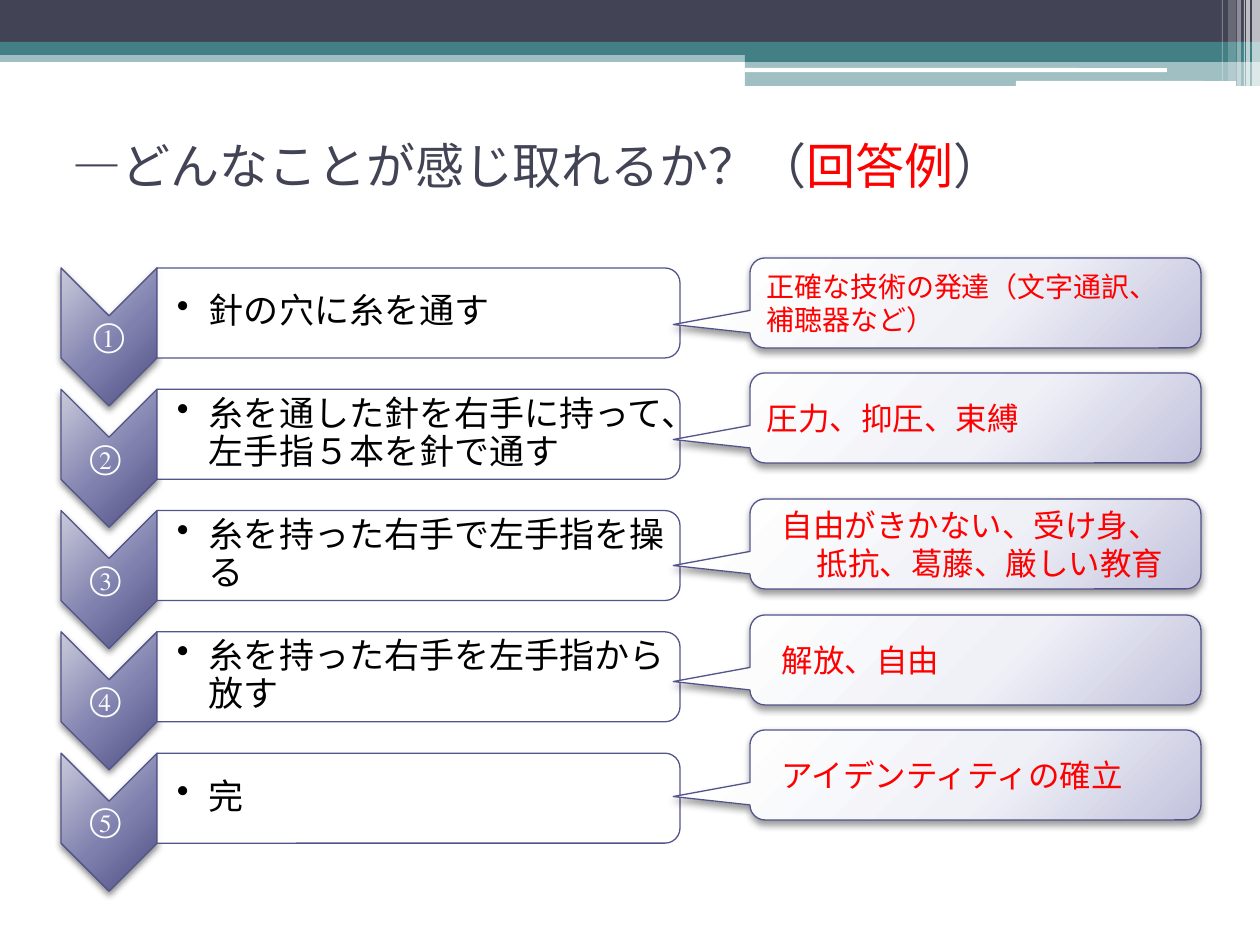
from lxml import etree
from pptx import Presentation
from pptx import util as u
from pptx.dml.color import RGBColor
from pptx.enum import shapes, text
from pptx.oxml import parse_xml
from pptx.oxml.ns import nsdecls, qn

PX = 914400 / 126
NAVY = RGBColor(0x42, 0x44, 0x56)
TEAL = RGBColor(0x43, 0x80, 0x86)
PURPLE = RGBColor(0x53, 0x54, 0x8A)
WHITE = RGBColor(0xFF, 0xFF, 0xFF)
BLACK = RGBColor(0, 0, 0)
RED = RGBColor(0xFF, 0, 0)
CHEVRON_SHADES = [(0, RGBColor(0xC9, 0xC9, 0xDA)), (55, RGBColor(0x7F, 0x80, 0xAE)),
                  (100, RGBColor(0x4D, 0x4E, 0x81))]
CALLOUT_SHADES = [(0, RGBColor(0xFE, 0xFE, 0xFE)), (55, RGBColor(0xF0, 0xF1, 0xF7)),
                  (100, RGBColor(0xC2, 0xC2, 0xDD))]
KIND = shapes.MSO_SHAPE
CJK = "Noto Sans CJK JP"

STEPS = [("①", "針の穴に糸を通す"),
         ("② ", "糸を通した針を右手に持って、左手指５本を針で通す"),
         ("③ ", "糸を持った右手で左手指を操る"),
         ("④ ", "糸を持った右手を左手指から放す"),
         ("⑤ ", "完")]
ANSWERS = [(258, "正確な技術の発達（文字通訳、補聴器など）", dict(size=16)),
           (373, "圧力、抑圧、束縛", {}),
           (499, "自由がきかない、受け身、抵抗、葛藤、厳しい教育", dict(indent=(50, -35))),
           (615, "解放、自由", dict(indent=(50, -35), before=3)),
           (730, "アイデンティティの確立", dict(indent=(50, -35), before=3))]


def px(*lengths):
    """Turn px lengths into EMU."""
    return [u.Emu(round(length * PX)) for length in lengths]


def write(frame, runs, font, size, east=CJK, align=text.PP_ALIGN.LEFT, insets=None,
          spacing=None, before=None, indent=None, bullet=False):
    """Fill a text frame with one paragraph of (wording, colour) runs."""
    frame.word_wrap = True
    frame.vertical_anchor = text.MSO_ANCHOR.MIDDLE
    if insets:
        (frame.margin_left, frame.margin_top,
         frame.margin_right, frame.margin_bottom) = px(*insets)
    paragraph = frame.paragraphs[0]
    paragraph.alignment = align
    if spacing:
        paragraph.line_spacing = spacing
    if before:
        paragraph.space_before = u.Pt(before)
    properties = paragraph._p.get_or_add_pPr()
    if indent:
        margin, first = px(*indent)
        properties.set("marL", str(margin))
        properties.set("indent", str(first))
    if bullet:
        etree.SubElement(properties, qn("a:buChar"), char="•")
    for wording, colour in runs:
        run = paragraph.add_run()
        run.text = wording
        run.font.size = u.Pt(size)
        run.font.color.rgb = colour
        run.font.name = font
        etree.SubElement(run._r.get_or_add_rPr(), qn("a:ea"), typeface=east)


def draw(parent, kind, box, fill=None, alpha=100, line=None, turned=False):
    """Add a preset shape covering the box, turned a quarter if asked."""
    x, y, w, h = box
    if turned:
        x, y, w, h = x + (w - h) / 2, y + (h - w) / 2, h, w
    shape = parent.add_shape(kind, *px(x, y, w, h))
    shape.shadow.inherit = False
    if turned:
        shape.rotation = 90
    if fill is None:
        shape.fill.background()
    else:
        shape.fill.solid()
        shape.fill.fore_color.rgb = fill
        if alpha < 100:
            colour = shape._element.spPr.find(qn("a:solidFill"))[0]
            etree.SubElement(colour, qn("a:alpha"), val=str(alpha * 1000))
    if line is None:
        shape.line.fill.background()
    else:
        shape.line.color.rgb = line
        shape.line.width = u.Pt(0.75)
    return shape


def glow(shape, shades, shadow_alpha):
    """Give a shape a radial gradient and a soft shadow below."""
    stops = "".join(f'<a:gs pos="{pos * 1000}"><a:srgbClr val="{shade}"/></a:gs>'
                    for pos, shade in shades)
    gradient = parse_xml(
        f'<a:gradFill {nsdecls("a")} rotWithShape="1"><a:gsLst>{stops}</a:gsLst>'
        '<a:path path="circle"><a:fillToRect l="-40000" t="-90000" r="140000" b="190000"/>'
        '</a:path></a:gradFill>')
    properties = shape._element.spPr
    properties.replace(properties.find(qn("a:noFill")), gradient)
    properties.find(qn("a:effectLst")).append(parse_xml(
        f'<a:outerShdw {nsdecls("a")} blurRad="{u.Pt(4)}" dist="{u.Pt(2)}" dir="5400000" '
        f'rotWithShape="0"><a:srgbClr val="{BLACK}"><a:alpha val="{shadow_alpha * 1000}"/>'
        '</a:srgbClr></a:outerShdw>'))


def add_header(slide, width):
    """Draw the banded header with its stripes at the right."""
    bands = [(0, 50, width, 12, TEAL, 50), (0, 0, width, 42, NAVY, 100),
             (0, 42, width, 13, TEAL, 100), (745, 49, width - 745, 13, TEAL, 100),
             (745, 61, width - 745, 25, TEAL, 50)]
    stripes = [(1252, 0, 8, 86, WHITE, 65), (1246, 0, 4, 86, WHITE, 65),
               (1244, 0, 1, 86, WHITE, 60), (1237, 0, 4, 86, WHITE, 40),
               (1228, 0, 8, 81, WHITE, 20), (1222, 0, 1, 81, WHITE, 30)]
    for *box, colour, alpha in bands:
        draw(slide.shapes, KIND.RECTANGLE, box, colour, alpha)
    for box in ((745, 68, 422, 4), (1016, 81, 220, 5)):
        draw(slide.shapes, KIND.ROUNDED_RECTANGLE, box, WHITE)
    for *box, colour, alpha in stripes:
        draw(slide.shapes, KIND.RECTANGLE, box, colour, alpha)


def add_title(slide, box):
    """Place and write the title."""
    title = slide.shapes.title
    title.left, title.top, title.width, title.height = px(*box)
    write(title.text_frame,
          [("—どんなことが感じ取れるか？（", NAVY), ("回答例", RED), ("）", NAVY)],
          "Roboto", 28)


def add_step(parent, box, number, action):
    """Draw a numbered chevron and its action panel."""
    x, y, w, h = box
    arrow_w = 96
    chevron = draw(parent, KIND.CHEVRON, (x, y, arrow_w, 138), line=PURPLE, turned=True)
    glow(chevron, CHEVRON_SHADES, 45)
    label = parent.add_textbox(*px(x, y + 48, arrow_w, 42))
    write(label.text_frame, [(number, WHITE)], "Cambria", 19, east="Cambria",
          align=text.PP_ALIGN.CENTER, insets=(1, 1, 1, 1), spacing=0.9)
    panel_x, panel_w = x + arrow_w, w - arrow_w
    draw(parent, KIND.ROUND_2_SAME_RECTANGLE, (panel_x, y, panel_w, h), WHITE, 90,
         line=PURPLE, turned=True)
    caption = parent.add_textbox(*px(panel_x, y + 4, panel_w - 4, h - 9))
    write(caption.text_frame, [(action, BLACK)], "Cambria", 20, insets=(20, 1, 1, 1),
          spacing=0.9, indent=(32, -32), bullet=True)


def add_answer(slide, box, answer, size=18, **layout):
    """Draw a callout holding one sample answer."""
    callout = draw(slide.shapes, KIND.ROUNDED_RECTANGULAR_CALLOUT, box, line=PURPLE)
    callout.adjustments[0] = -0.67
    callout.adjustments[1] = 0.24
    glow(callout, CALLOUT_SHADES, 40)
    write(callout.text_frame, [(answer, RED)], CJK, size, **layout)


def main():
    """Build the slide and save it."""
    deck = Presentation()
    deck.slide_width, deck.slide_height = px(1260, 945)
    slide = deck.slides.add_slide(deck.slide_layouts[5])
    add_header(slide, 1260)
    add_title(slide, (60, 106, 1134, 118))
    steps = slide.shapes.add_group_shape().shapes
    for row, (number, action) in enumerate(STEPS):
        add_step(steps, (61, 268 + row * 121.3, 619, 90), number, action)
    for top, answer, layout in ANSWERS:
        add_answer(slide, (750, top, 451, 90), answer, **layout)
    deck.save("out.pptx")


if __name__ == "__main__":
    main()
